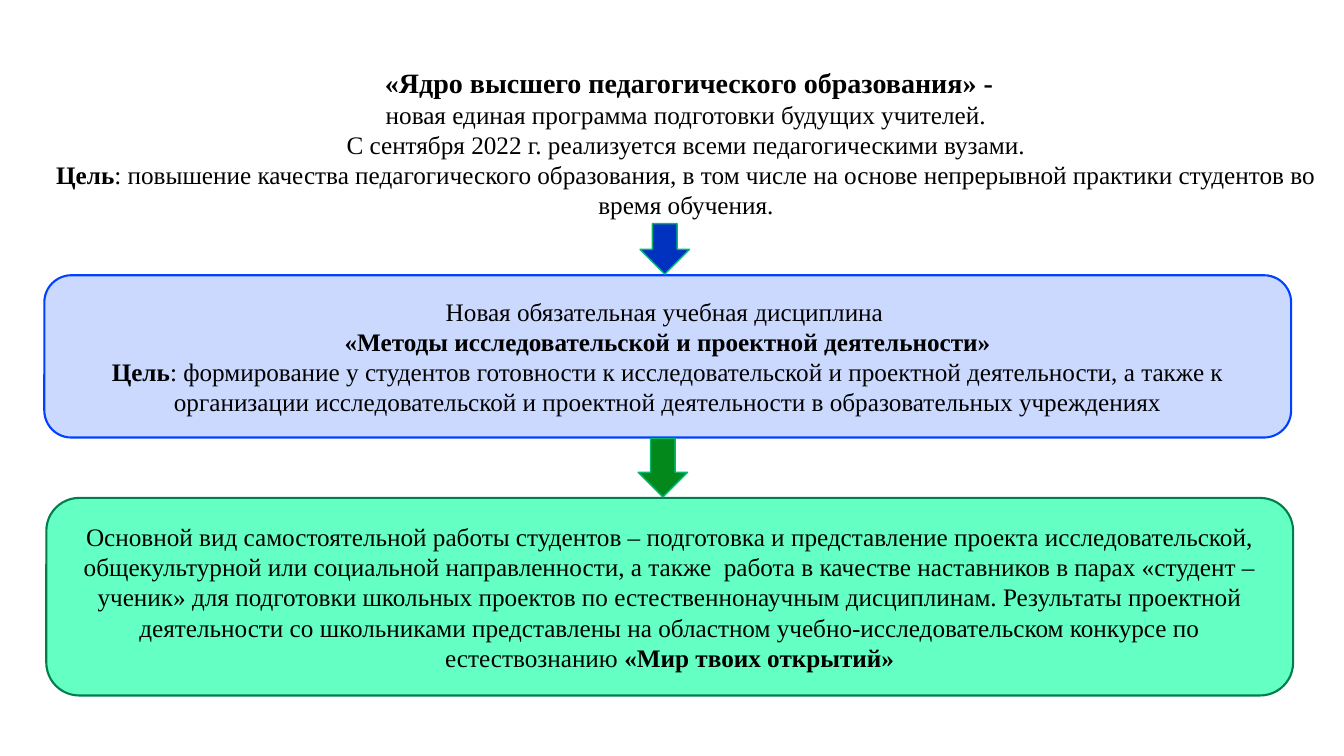
from pptx import Presentation
from pptx.dml.color import RGBColor
from pptx.enum.shapes import MSO_SHAPE
from pptx.enum.text import MSO_ANCHOR, PP_ALIGN
from pptx.util import Pt

THEME = {
    "text": "000000",
    "discipline_fill": "CCD9FF",
    "discipline_line": "0041FF",
    "project_fill": "64FFC2",
    "project_line": "007E4C",
    "blue_arrow": "0031BF",
    "green_arrow": "02881B",
    "arrow_line": "00BA70",
    "font": "Times New Roman",
    "space_font": "Roboto",
    "heading_size": 20,
    "body_size": 18,
    "box_line": 1.5,
    "arrow_outline": 1,
}


def write_text(frame, paragraphs, anchor):
    frame.word_wrap = True
    frame.vertical_anchor = anchor
    for index, runs in enumerate(paragraphs):
        para = frame.paragraphs[0] if index == 0 else frame.add_paragraph()
        para.alignment = PP_ALIGN.CENTER
        for text, bold, size, font in runs:
            span = para.add_run()
            span.text = text
            span.font.bold = bold
            span.font.size = Pt(THEME[size])
            span.font.name = THEME[font]
            span.font.color.rgb = RGBColor.from_string(THEME["text"])


def add_figure(page, kind, place, fill, line, width):
    figure = page.shapes.add_shape(kind, *[Pt(value) for value in place])
    figure.shadow.inherit = False
    figure.fill.solid()
    figure.fill.fore_color.rgb = RGBColor.from_string(THEME[fill])
    figure.line.color.rgb = RGBColor.from_string(THEME[line])
    figure.line.width = Pt(THEME[width])
    return figure


deck = Presentation()
deck.slide_width = Pt(960)
deck.slide_height = Pt(540)
page = deck.slides.add_slide(deck.slide_layouts[6])

body = ("body_size", "font")
program = [
    [
        (" ", False, "body_size", "space_font"),
        ("«Ядро высшего педагогического образования» -", True, "heading_size", "font"),
    ],
    [("новая единая программа подготовки будущих учителей.", False, *body)],
    [("С сентября 2022 г. реализуется всеми педагогическими вузами.", False, *body)],
    [
        ("Цель", True, *body),
        (": повышение качества педагогического образования, в том числе на основе "
         "непрерывной практики студентов во время обучения.", False, *body),
    ],
]
discipline = [
    [("Новая обязательная учебная дисциплина ", False, *body)],
    [("«Методы исследовательской и проектной деятельности»", True, *body)],
    [
        ("Цель", True, *body),
        (": формирование у студентов готовности к исследовательской и проектной "
         "деятельности, а также к организации исследовательской и проектной "
         "деятельности в образовательных учреждениях", False, *body),
    ],
]
project = [
    [
        ("Основной вид самостоятельной работы студентов – подготовка и представление "
         "проекта исследовательской, общекультурной или социальной направленности, "
         "а также  работа в качестве наставников в парах «студент – ученик» для "
         "подготовки школьных проектов по естественнонаучным дисциплинам. Результаты "
         "проектной деятельности со школьниками представлены на областном "
         "учебно-исследовательском конкурсе по естествознанию ", False, *body),
        ("«Мир твоих открытий»", True, *body),
    ],
]

program_box = page.shapes.add_textbox(Pt(31.7), Pt(43.2), Pt(916.6), Pt(118.8))
write_text(program_box.text_frame, program, MSO_ANCHOR.TOP)

for place, fill, line, paragraphs in [
    ((31.7, 196.6, 890.6, 115.9), "discipline_fill", "discipline_line", discipline),
    ((33.1, 355.7, 890.6, 141.1), "project_fill", "project_line", project),
]:
    box = add_figure(page, MSO_SHAPE.ROUNDED_RECTANGLE, place, fill, line, "box_line")
    write_text(box.text_frame, paragraphs, MSO_ANCHOR.MIDDLE)

for place, fill in [
    ((457.2, 159.8, 35.3, 36), "blue_arrow"),
    ((455.8, 313.2, 35.3, 41.8), "green_arrow"),
]:
    add_figure(page, MSO_SHAPE.DOWN_ARROW, place, fill, "arrow_line", "arrow_outline")

deck.save("out.pptx")
